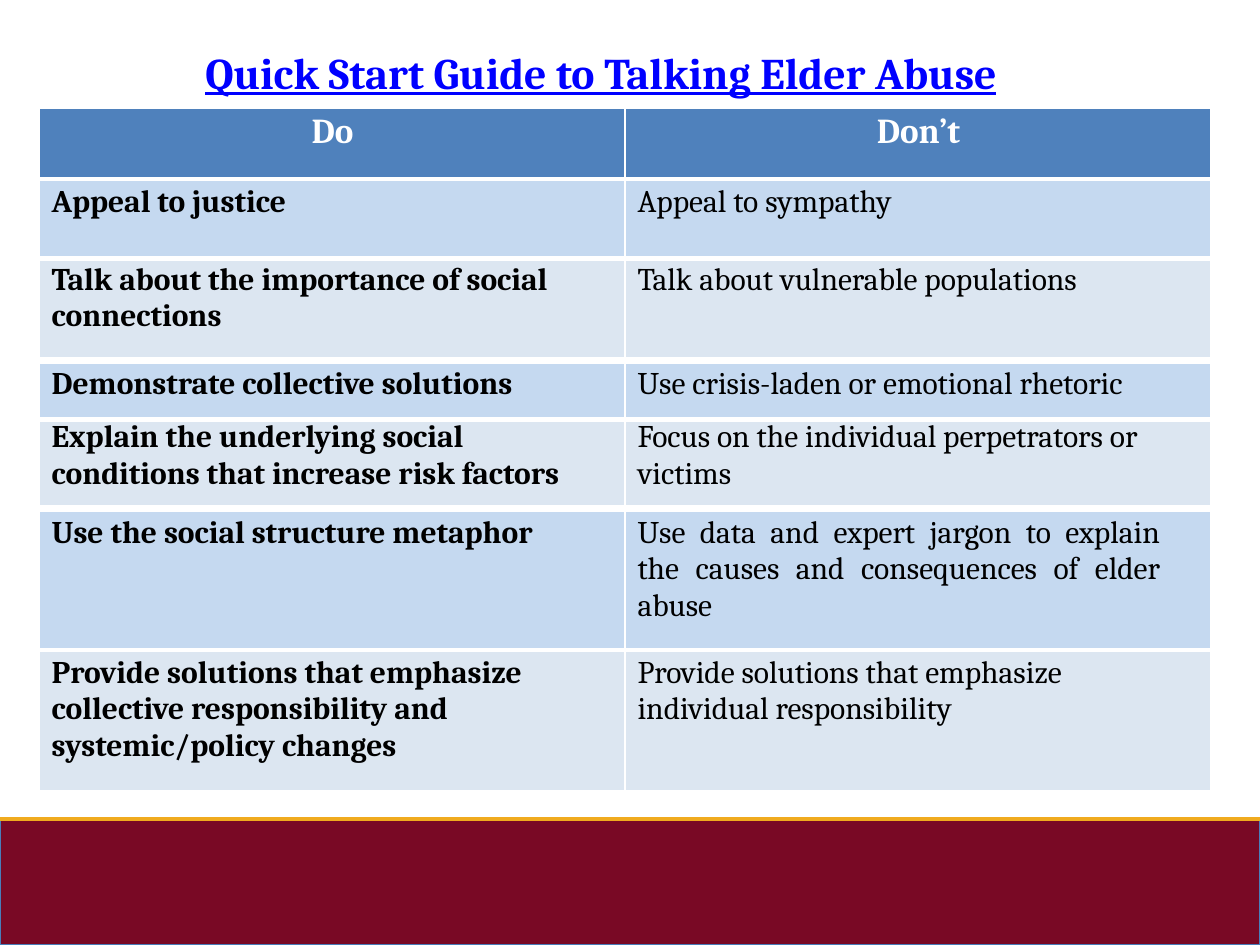
from lxml import etree
from pptx import Presentation
from pptx.dml.color import RGBColor
from pptx.enum.shapes import MSO_CONNECTOR, MSO_SHAPE
from pptx.enum.text import MSO_ANCHOR, MSO_AUTO_SIZE, PP_ALIGN
from pptx.oxml.ns import qn
from pptx.util import Inches, Pt

LEFT, CENTER, JUSTIFY = PP_ALIGN.LEFT, PP_ALIGN.CENTER, PP_ALIGN.JUSTIFY
TOP = MSO_ANCHOR.TOP
FIT_SHAPE = MSO_AUTO_SIZE.SHAPE_TO_FIT_TEXT
RECTANGLE = MSO_SHAPE.RECTANGLE
STRAIGHT = MSO_CONNECTOR.STRAIGHT

FONT = "Cambria"
COLORS = {
    "title": "0000FF",
    "header": "4F81BC",
    "odd_row": "C5D9F0",
    "even_row": "DCE6F1",
    "text": "000000",
    "white": "FFFFFF",
    "footer": "790925",
    "footer_edge": "497DBA",
    "gold": "F0AB1F",
}
HEADINGS = ("Do", "Don’t")
# Each row: height, top margin, do, don't
ADVICE = [
    (0.63, 0.04, "Appeal to justice", "Appeal to sympathy"),
    (0.81, 0.03, "Talk about the importance of social\nconnections",
     "Talk about vulnerable populations"),
    (0.47, 0.05, "Demonstrate collective solutions",
     "Use crisis-laden or emotional rhetoric"),
    (0.71, 0, "Explain the underlying social\nconditions that increase risk factors",
     "Focus on the individual perpetrators or\nvictims"),
    (1.12, 0.05, "Use the social structure metaphor",
     "Use data and expert jargon to explain the causes and consequences of elder abuse"),
    (1.13, 0.04, "Provide solutions that emphasize collective responsibility and "
     "systemic/policy changes",
     "Provide solutions that emphasize individual responsibility"),
]
JUSTIFIED_ROW = 5
RULE_WIDTHS = [1, 3, 3, 4.5, 3, 4.5, 3, 3]  # horizontal rules, top to bottom


def color(name):
    return RGBColor.from_string(COLORS[name])


class SlideBuilder:
    def __init__(self, presentation):
        self.slide = presentation.slides.add_slide(presentation.slide_layouts[5])
        self.shapes = self.slide.shapes

    def set_text(self, frame, text, size, color_name, bold, align=LEFT):
        frame.text = text
        for paragraph in frame.paragraphs:
            paragraph.alignment = align
            paragraph.space_before = Pt(0)
            font = paragraph.font
            font.name, font.size, font.bold = FONT, Pt(size), bold
            font.color.rgb = color(color_name)

    def title(self, text, left, top, width, height):
        shape = self.shapes.title
        shape.left, shape.top = Inches(left), Inches(top)
        shape.width, shape.height = Inches(width), Inches(height)
        frame = shape.text_frame
        frame.margin_left = frame.margin_right = frame.margin_bottom = 0
        frame.margin_top = Inches(0.01)
        frame.vertical_anchor = TOP
        frame.word_wrap = True
        frame.auto_size = FIT_SHAPE
        self.set_text(frame, text, 25, "title", True)
        frame.paragraphs[0].font.underline = True

    def rectangle(self, left, top, width, height, fill, edge):
        shape = self.shapes.add_shape(
            RECTANGLE, Inches(left), Inches(top), Inches(width), Inches(height))
        shape.shadow.inherit = False
        shape.fill.solid()
        shape.fill.fore_color.rgb = color(fill)
        shape.line.color.rgb = color(edge)
        shape.line.width = Pt(0.72)

    def horizontal_line(self, left, top, width, color_name, weight):
        line = self.shapes.add_connector(
            STRAIGHT, Inches(left), Inches(top), Inches(left + width), Inches(top))
        line.line.color.rgb = color(color_name)
        line.line.width = Pt(weight)
        etree.SubElement(line._element.spPr, qn("a:effectLst"))

    def table(self, left, top, column_width, heights):
        columns = len(HEADINGS)
        table = self.shapes.add_table(
            len(heights), columns, Inches(left), Inches(top),
            Inches(column_width * columns), Inches(sum(heights))).table
        table.horz_banding = False
        for column in table.columns:
            column.width = Inches(column_width)
        for row, height in zip(table.rows, heights):
            row.height = Inches(height)
        return table

    def cell(self, cell, text, fill, margins, rules, **style):
        """Margins are left, top, right; rules are the top and bottom widths."""
        left, top, right = margins
        cell.margin_left, cell.margin_top = Inches(left), Inches(top)
        cell.margin_right, cell.margin_bottom = Inches(right), 0
        cell.vertical_anchor = TOP
        properties = cell._tc.get_or_add_tcPr()
        for side, width in zip(("lnL", "lnR", "lnT", "lnB"), (1, 1, *rules)):
            border = etree.SubElement(properties, qn(f"a:{side}"), w=str(Pt(width)))
            solid = etree.SubElement(border, qn("a:solidFill"))
            etree.SubElement(solid, qn("a:srgbClr"), val=COLORS["white"])
        cell.fill.solid()
        cell.fill.fore_color.rgb = color(fill)
        self.set_text(cell.text_frame, text, **style)


def main():
    presentation = Presentation()
    presentation.slide_width, presentation.slide_height = Inches(10), Inches(7.5)
    builder = SlideBuilder(presentation)

    builder.rectangle(0, 6.5, 10, 1, "footer", "footer_edge")
    builder.horizontal_line(0, 6.5, 10, "gold", 2.04)
    builder.title("Quick Start Guide to Talking Elder Abuse", 1.63, 0.35, 6.69, 0.44)

    table = builder.table(0.31, 0.86, 4.65, [0.56] + [row[0] for row in ADVICE])
    for column, heading in enumerate(HEADINGS):
        builder.cell(table.cell(0, column), heading, "header", (0.01, 0.03, 0),
                     RULE_WIDTHS[:2], size=20, color_name="white", bold=True,
                     align=CENTER)
    for row, (_, margin_top, *advice) in enumerate(ADVICE, start=1):
        fill = "odd_row" if row % 2 else "even_row"
        for column, text in enumerate(advice):
            justified = row == JUSTIFIED_ROW and column == 1
            builder.cell(table.cell(row, column), text, fill, (0.1, margin_top, 0.4),
                         RULE_WIDTHS[row:row + 2], size=18, color_name="text",
                         bold=column == 0, align=JUSTIFY if justified else LEFT)

    presentation.save("out.pptx")


if __name__ == "__main__":
    main()
